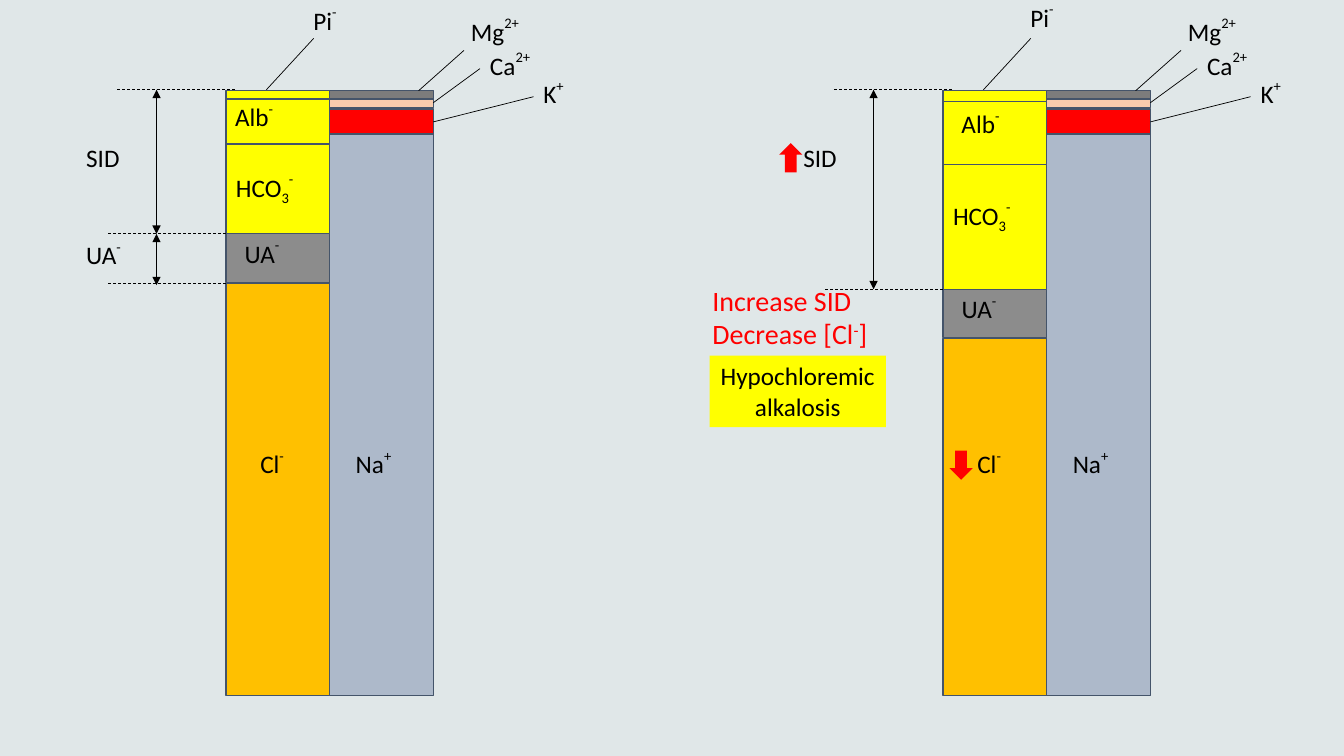
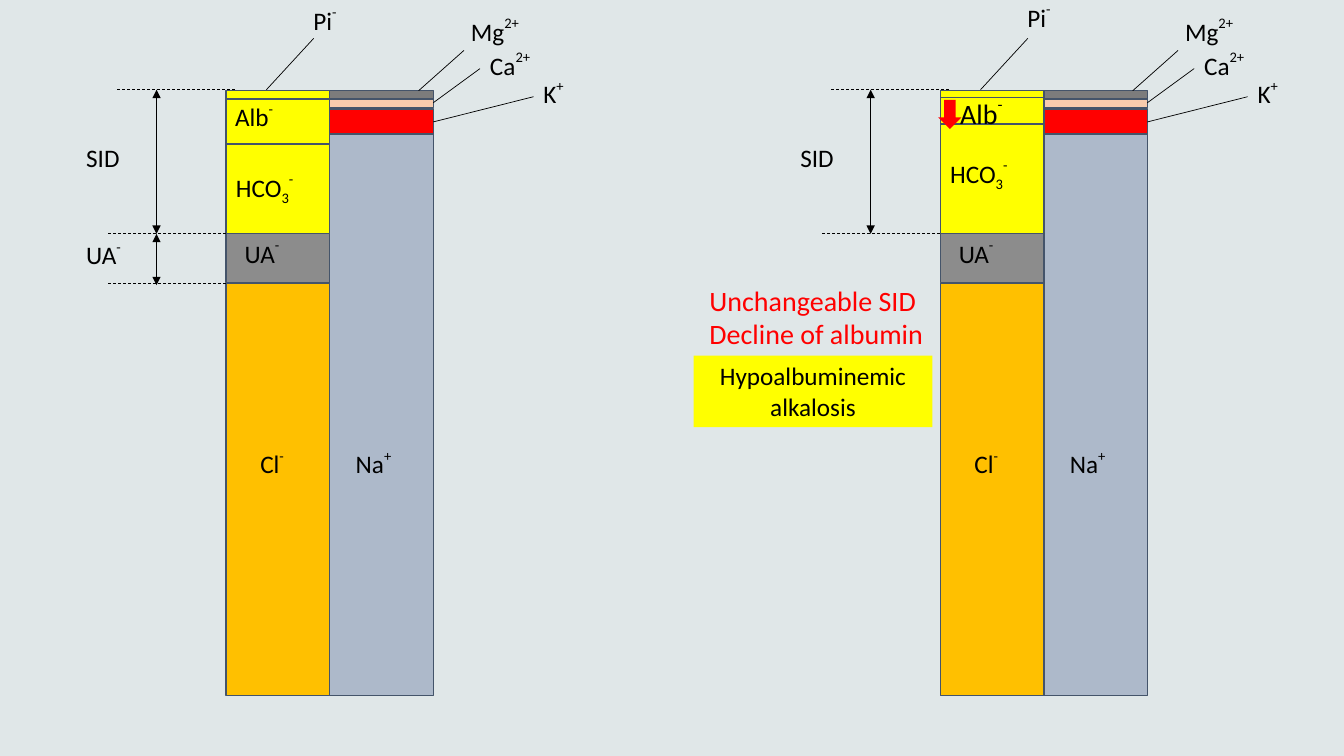
from dataclasses import dataclass

from lxml import etree
from pptx import Presentation
from pptx.dml.color import RGBColor
from pptx.enum import dml, shapes, text
from pptx.oxml import ns
from pptx.util import Pt


@dataclass(frozen=True)
class Theme:
    font: str = "Calibri"
    label: float = 18
    finding: float = 20
    background: str = "E0E7E8"
    ink: str = "000000"
    outline: str = "44546A"
    alert: str = "FF0000"
    buffer: str = "FFFF00"
    chloride: str = "FFC000"
    unmeasured: str = "8C8C8C"
    sodium: str = "ADB9CA"
    potassium: str = "FF0000"
    calcium: str = "F8CBAD"
    magnesium: str = "7C7C7C"


@dataclass(frozen=True)
class Balance:
    alb: float
    hco3: float
    ua: float
    cl: float
    pi_label: float
    alb_label: tuple
    hco3_label: float
    alb_size: float = 18
    ua_bracket: bool = False


THEME = Theme()
COLUMN_WIDTH, COLUMN_HEIGHT, COLUMN_TOP = 74, 432, 64.8
UA_HEIGHT = 34.6
SUP, SUB = 50, -25

PI = [("Pi", 0), ("-", SUP)]
MG = [("Mg", 0), ("2+", SUP)]
CA = [("Ca", 0), ("2+", SUP)]
K = [("K", 0), ("+", SUP)]
NA = [("Na", 0), ("+", SUP)]
CL = [("Cl", 0), ("-", SUP)]
UA = [("UA", 0), ("-", SUP)]
HCO3 = [("HCO", 0), ("3", SUB), ("-", SUP)]
ALB = [("Alb", 0), ("-", SUP)]
SID = [("SID", 0)]

NORMAL = Balance(5.8, 38.2, 102.2, 137.5, -66.2, (-0.7, 2.9), 53.3, ua_bracket=True)
LOW_CHLORIDE = Balance(7.9, 52.6, 141.8, 177.1, -68.4, (6, 7.9), 73.4)
LOW_ALBUMIN = Balance(5, 23.8, 102.2, 137.5, -68.4, (7.2, -0.7), 43.2, alb_size=20)


def color(value):
    return RGBColor.from_string(value)


def add_block(slide, kind, x, y, w, h, fill, outline=None):
    block = slide.shapes.add_shape(kind, Pt(x), Pt(y), Pt(w), Pt(h))
    block.shadow.inherit = False
    block.fill.solid()
    block.fill.fore_color.rgb = color(fill)
    if outline:
        block.line.color.rgb = color(outline)
        block.line.width = Pt(1)
    else:
        block.line.fill.background()
    return block


def write(frame, lines, size, ink, align=text.PP_ALIGN.LEFT):
    frame.word_wrap = True
    frame.vertical_anchor = text.MSO_ANCHOR.TOP
    for index, line in enumerate(lines):
        paragraph = frame.paragraphs[0] if index == 0 else frame.add_paragraph()
        paragraph.alignment = align
        for words, baseline in line:
            run = paragraph.add_run()
            run.text = words
            run.font.name = THEME.font
            run.font.size = Pt(size)
            run.font.color.rgb = color(ink)
            if baseline:
                run._r.get_or_add_rPr().set("baseline", str(baseline * 1000))


def add_label(slide, x, y, w, h, lines, size=THEME.label, ink=THEME.ink):
    label = slide.shapes.add_textbox(Pt(x), Pt(y), Pt(w), Pt(h))
    write(label.text_frame, lines, size, ink)


def add_line(slide, start, end, dashed=False, arrows=False):
    points = [Pt(value) for value in (*start, *end)]
    line = slide.shapes.add_connector(shapes.MSO_CONNECTOR.STRAIGHT, *points)
    line.line.color.rgb = color(THEME.ink)
    line.line.width = Pt(0.5)
    if dashed:
        line.line.dash_style = dml.MSO_LINE.DASH
    if arrows:
        outline = line.line._get_or_add_ln()
        for end_tag in ("a:headEnd", "a:tailEnd"):
            etree.SubElement(outline, ns.qn(end_tag), type="triangle")
    etree.SubElement(line._element.spPr, ns.qn("a:effectLst"))


def add_change_arrow(slide, x, y, rotation=0):
    arrow = add_block(slide, shapes.MSO_SHAPE.DOWN_ARROW, x, y, 16.6, 20.9, THEME.alert)
    arrow.rotation = rotation


def add_columns(slide, left, top, state):
    cations = [
        (31, COLUMN_HEIGHT, THEME.sodium),
        (13, 31, THEME.potassium),
        (4.3, 12.2, THEME.calcium),
        (0, 5.8, THEME.magnesium),
    ]
    anions = [
        (state.cl, COLUMN_HEIGHT, THEME.chloride),
        (0, state.alb + 1.5, THEME.buffer),
        (state.ua, state.ua + UA_HEIGHT, THEME.unmeasured),
        (state.hco3, state.ua, THEME.buffer),
        (state.alb, state.hco3, THEME.buffer),
    ]
    for x, ions in ((left + COLUMN_WIDTH, cations), (left, anions)):
        for upper, lower, fill in ions:
            add_block(slide, shapes.MSO_SHAPE.RECTANGLE, x, top + upper,
                      COLUMN_WIDTH, lower - upper, fill, THEME.outline)


def add_ion_labels(slide, left, top, state):
    labels = [
        (PI, 55.2, state.pi_label, 41),
        (MG, 167.8, -58.3, 66),
        (CA, 181.4, -33.8, 59),
        (K, 219.6, -13.7, 42),
        (NA, 85.5, 250.6, 53),
        (CL, 17.3, 250.6, 43),
        (UA, 6.2, state.ua - 1.8, 55),
        (HCO3, 0, state.hco3_label, 80),
    ]
    for ion, dx, dy, width in labels:
        add_label(slide, left + dx, top + dy, width, 36, [ion])
    dx, dy = state.alb_label
    add_label(slide, left + dx, top + dy, 57, 36, [ALB], state.alb_size)
    leaders = [
        ((169.9, -28.8), (137.5, 0)),
        ((181.4, -15.8), (148, 8.6)),
        ((219.6, 4.3), (148, 22.3)),
        ((28.8, -0.7), (62.6, -37.4)),
    ]
    for ends in leaders:
        add_line(slide, *[(left + x, top + y) for x, y in ends])


def add_brackets(slide, left, top, state):
    axis = left - 49.7
    upper, middle, lower = top - 0.7, top + state.ua, top + state.cl
    add_line(slide, (left + 6.2, upper), (left - 78.8, upper), dashed=True)
    add_line(slide, (left, middle), (left - 85, middle), dashed=True)
    add_line(slide, (axis, upper), (axis, middle), arrows=True)
    add_label(slide, left - 107, top + 33.1, 55, 36, [SID])
    if state.ua_bracket:
        add_line(slide, (left, lower), (left - 85, lower), dashed=True)
        add_line(slide, (axis, middle), (axis, lower + 1.4), arrows=True)
        add_label(slide, left - 107, middle - 0.7, 55, 36, [UA])


def add_gamblegram(slide, left, top, state):
    add_columns(slide, left, top, state)
    add_ion_labels(slide, left, top, state)
    add_brackets(slide, left, top, state)


def add_outcome(slide, left, top, findings, verdict, verdict_x, verdict_width):
    add_label(slide, left, top, 180, 55.4, findings, THEME.finding, THEME.alert)
    banner = add_block(slide, shapes.MSO_SHAPE.RECTANGLE, left + verdict_x, top + 55.4,
                       verdict_width, 51, THEME.buffer)
    banner.text_frame.margin_left = banner.text_frame.margin_right = 0
    write(banner.text_frame, verdict, THEME.label, THEME.ink, text.PP_ALIGN.CENTER)


def add_comparison(deck, changed_left, changed, arrows, outcome):
    slide = deck.slides.add_slide(deck.slide_layouts[6])
    slide.background.fill.solid()
    slide.background.fill.fore_color.rgb = color(THEME.background)
    add_gamblegram(slide, 161.5, COLUMN_TOP, NORMAL)
    add_gamblegram(slide, changed_left, COLUMN_TOP, changed)
    add_outcome(slide, *outcome)
    for dx, dy, rotation in arrows:
        add_change_arrow(slide, changed_left + dx, COLUMN_TOP + dy, rotation)


def main():
    deck = Presentation()
    deck.slide_width, deck.slide_height = Pt(960), Pt(540)
    add_comparison(
        deck, 673.7, LOW_CHLORIDE, [(-117.2, 37.4, 180), (4.5, 257, 0)],
        (501.8, 198.7,
         [[("Increase SID", 0)], [("Decrease [Cl", 0), ("-", 30), ("]", 0)]],
         [[("Hypochloremic", 0)], [("alkalosis", 0)]], 5, 126))
    add_comparison(
        deck, 671.6, LOW_ALBUMIN, [(-1.4, 6.5, 0)],
        (499.7, 198.7,
         [[("Unchangeable SID", 0)], [("Decline of albumin", 0)]],
         [[("Hypoalbuminemic alkalosis", 0)]], -4.3, 170.6))
    deck.save("out.pptx")


if __name__ == "__main__":
    main()
